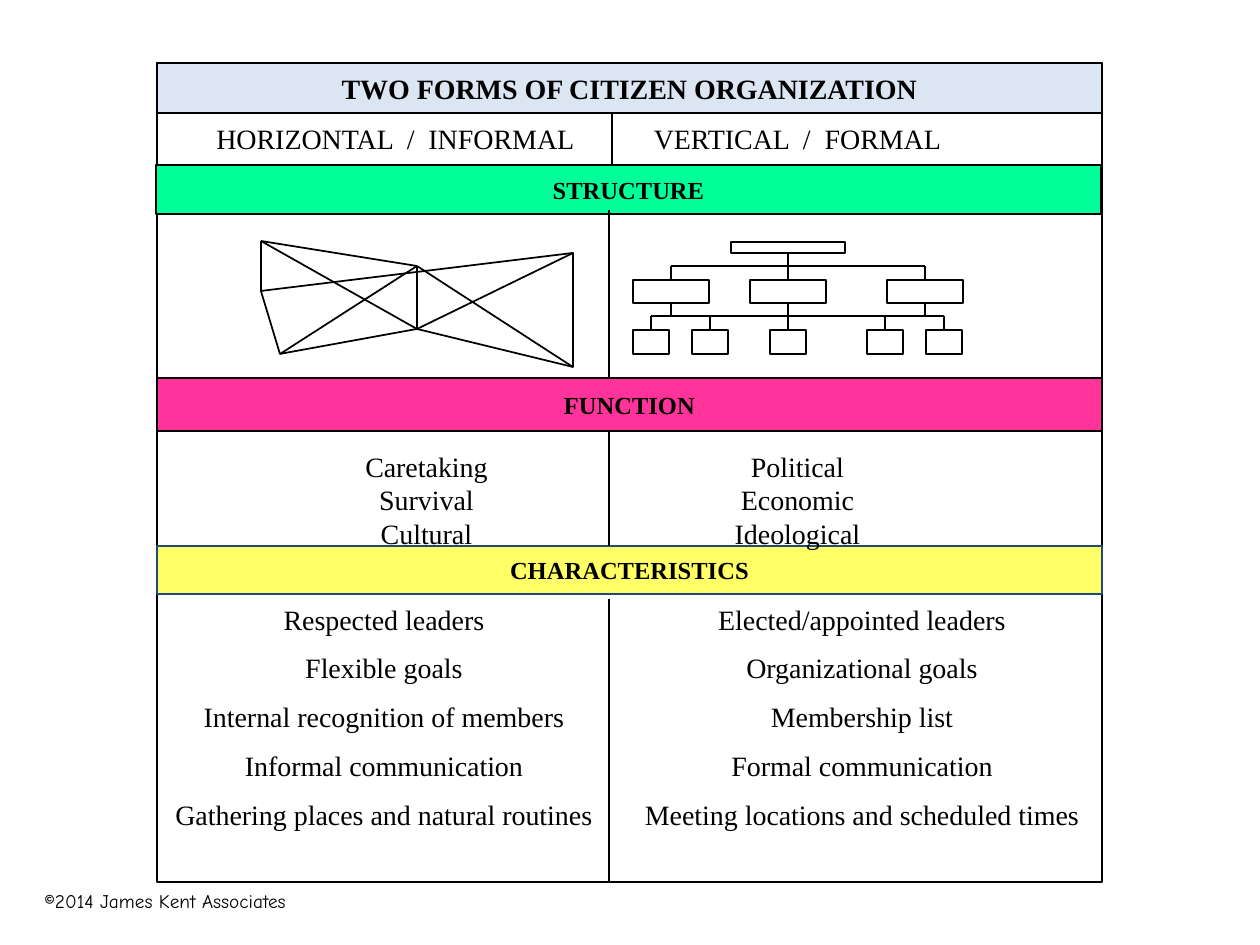
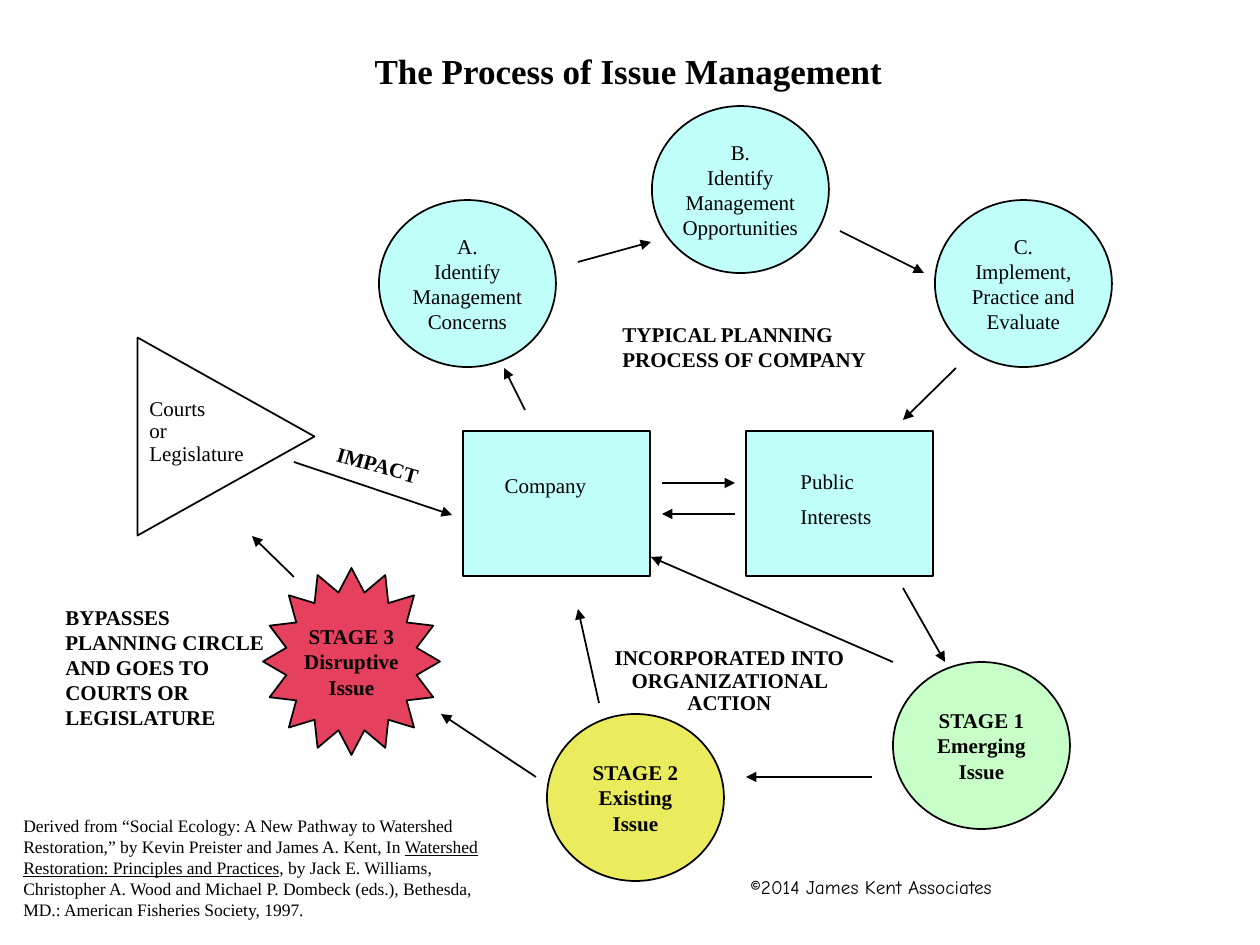
from lxml.etree import SubElement
from pptx import Presentation
from pptx.dml.color import RGBColor
from pptx.enum.shapes import MSO_CONNECTOR, MSO_SHAPE
from pptx.enum.text import MSO_ANCHOR, MSO_AUTO_SIZE, PP_ALIGN
from pptx.oxml.ns import qn
from pptx.util import Emu, Pt

UNIT = 914400 / 126  # EMU in one px
TITLE_ONLY = 5
SERIF, HAND = "Times New Roman", "Comic Neue"
BLACK, NAVY = "000000", "1F497D"
ICE, GREEN, PINK, YELLOW = "DCE6F2", "00FF99", "FF3399", "FFFF66"
AQUA, LIME, MUSTARD, RED = "C0FEF9", "C8FEC8", "EAEC5E", "E5405D"
DIVIDER = 609


def px(*lengths):
    return [Emu(round(length * UNIT)) for length in lengths]


def colour(hex_text):
    return RGBColor.from_string(hex_text)


def write(box, paragraphs, size=12, bold=False, font=SERIF, align=PP_ALIGN.LEFT,
          gap=0, spacing=None, anchor=MSO_ANCHOR.TOP, wrap=True):
    """Fill a box; a paragraph is a string or a list of (text, underlined)."""
    frame = box.text_frame
    frame.word_wrap = wrap
    frame.auto_size = MSO_AUTO_SIZE.NONE
    frame.vertical_anchor = anchor
    for index, spans in enumerate(paragraphs):
        para = frame.add_paragraph() if index else frame.paragraphs[0]
        para.alignment = align
        if index and gap:
            para.space_before = Pt(gap)
        if spacing:
            para.line_spacing = spacing
        if isinstance(spans, str):
            spans = [(spans, False)]
        for text, underlined in spans:
            span = para.add_run()
            span.text = text
            span.font.name, span.font.size = font, Pt(size)
            span.font.bold, span.font.underline = bold, underlined
            span.font.color.rgb = colour(BLACK)


def add_text(page, left, top, width, height, paragraphs, **text_format):
    box = page.shapes.add_textbox(*px(left, top, width, height))
    write(box, paragraphs, **text_format)
    return box


def paint(shape, fill=None, line=BLACK):
    if fill:
        shape.fill.solid()
        shape.fill.fore_color.rgb = colour(fill)
    else:
        shape.fill.background()
    shape.line.color.rgb = colour(line)
    shape.line.width = Pt(1)


def add_box(page, left, top, width, height, kind=MSO_SHAPE.RECTANGLE,
            fill=None, line=BLACK):
    box = page.shapes.add_shape(kind, *px(left, top, width, height))
    box.shadow.inherit = False
    paint(box, fill, line)
    return box


def add_label_box(page, left, top, width, height, paragraphs, size=12, bold=False,
                  **look):
    box = add_box(page, left, top, width, height, **look)
    write(box, paragraphs, size=size, bold=bold, align=PP_ALIGN.CENTER,
          anchor=MSO_ANCHOR.MIDDLE, wrap=False)


def add_line(page, start, end, arrow=False):
    line = page.shapes.add_connector(MSO_CONNECTOR.STRAIGHT, *px(*start, *end))
    line.line.color.rgb = colour(BLACK)
    line.line.width = Pt(1)
    properties = line._element.spPr
    if arrow:
        SubElement(properties.find(qn("a:ln")), qn("a:tailEnd"), type="triangle")
    SubElement(properties, qn("a:effectLst"))


def add_title(page, left, top, width, height, text, size):
    title = page.shapes.title
    title.left, title.top, title.width, title.height = px(left, top, width, height)
    write(title, [text], size=size, bold=True, align=PP_ALIGN.CENTER,
          anchor=MSO_ANCHOR.MIDDLE)
    return title


def add_copyright(page, left, top):
    add_text(page, left, top, 307, 37, ["©2014 James Kent Associates"],
             size=11, font=HAND)


def draw_network(page):
    top_left, mid_left, low_left = (261, 241), (261, 291), (280, 354)
    high_hub, low_hub = (417, 266), (417, 329)
    top_right, low_right = (573, 253), (573, 367)
    builder = page.shapes.build_freeform(*low_left, scale=UNIT)
    builder.add_line_segments([low_hub, low_right, top_right, mid_left], close=True)
    outline = builder.convert_to_shape()
    outline.shadow.inherit = False
    paint(outline)
    for start, end in [(low_right, high_hub), (high_hub, top_left),
                       (top_left, mid_left), (low_hub, high_hub),
                       (low_hub, top_right), (high_hub, low_left),
                       (low_hub, top_left)]:
        add_line(page, start, end)


def draw_hierarchy(page):
    managers, staff = [671, 788, 925], [651, 710, 788, 885, 944]
    manager_rail, staff_rail = 266, 316
    for centres, top, width, height in [([788], 242, 114, 11),
                                        (managers, 280, 76, 23),
                                        (staff, 330, 36, 24)]:
        for centre in centres:
            add_box(page, centre - width // 2, top, width, height)
    for centres, rail in [(managers, manager_rail), (staff, staff_rail)]:
        add_line(page, (centres[0], rail), (centres[-1], rail))
    for centres, top, bottom in [([788], 253, manager_rail),
                                 (managers, manager_rail, 279),
                                 (managers, 303, staff_rail),
                                 (staff, staff_rail, 329)]:
        for centre in centres:
            add_line(page, (centre, top), (centre, bottom))


def build_organization(deck):
    page = deck.slides.add_slide(deck.slide_layouts[TITLE_ONLY])

    # Frame and bands
    add_box(page, 157, 63, 945, 819)
    title = add_title(page, 157, 63, 945, 50, "TWO FORMS OF CITIZEN ORGANIZATION", 16)
    paint(title, ICE)
    for left, top, height, name, fill, line in [
            (156, 165, 49, "STRUCTURE", GREEN, BLACK),
            (157, 378, 53, "FUNCTION", PINK, BLACK),
            (157, 546, 48, "CHARACTERISTICS", YELLOW, NAVY)]:
        add_label_box(page, left, top, 945, height, [name], size=14, bold=True,
                      fill=fill, line=line)

    # Column dividers
    for x, top, bottom in [(612, 114, 165), (DIVIDER, 210, 378),
                           (DIVIDER, 431, 546), (DIVIDER, 599, 882)]:
        add_line(page, (x, top), (x, bottom))

    draw_network(page)
    draw_hierarchy(page)

    # Both columns: heading, functions, characteristics
    for left, top, width, height, gap, lines in [
            (199, 115, 393, 47, 0, ["HORIZONTAL  /  INFORMAL"]),
            (632, 115, 331, 47, 0, ["VERTICAL  /  FORMAL"]),
            (261, 443, 331, 109, 0, ["Caretaking", "Survival", "Cultural"]),
            (632, 443, 331, 109, 0, ["Political", "Economic", "Ideological"]),
            (157, 596, 454, 250, 8.7,
             ["Respected leaders", "Flexible goals", "Internal recognition of members",
              "Informal communication", "Gathering places and natural routines"]),
            (632, 596, 460, 250, 8.7,
             ["Elected/appointed leaders", "Organizational goals", "Membership list",
              "Formal communication", "Meeting locations and scheduled times"])]:
        add_text(page, left, top, width, height, lines, size=16,
                 align=PP_ALIGN.CENTER, gap=gap)
    add_copyright(page, 32, 883)


def build_process(deck):
    page = deck.slides.add_slide(deck.slide_layouts[TITLE_ONLY])
    add_title(page, 140, 43, 977, 54, "The Process of Issue Management", 20)

    # Planning steps and issue stages
    for left, top, fill, bold, lines in [
            (379, 200, AQUA, False, ["A.", "Identify", "Management", "Concerns"]),
            (652, 106, AQUA, False, ["B.", "Identify", "Management", "Opportunities"]),
            (935, 200, AQUA, False, ["C.", "Implement,", "Practice and", "Evaluate"]),
            (893, 662, LIME, True, ["STAGE 1", "Emerging", "Issue"]),
            (547, 714, MUSTARD, True, ["STAGE 2", "Existing", "Issue"])]:
        add_label_box(page, left, top, 177, 167, lines, bold=bold,
                      kind=MSO_SHAPE.OVAL, fill=fill)
    add_label_box(page, 263, 568, 177, 187, ["STAGE 3", "Disruptive", "Issue"],
                  bold=True, kind=MSO_SHAPE.STAR_16_POINT, fill=RED)

    # Courts, company and public
    courts = add_box(page, 127, 348, 198, 177, kind=MSO_SHAPE.ISOSCELES_TRIANGLE)
    courts.rotation = 90
    add_text(page, 137, 392, 126, 76, ["Courts", "or", "Legislature"], spacing=0.9)
    for left in (463, 746):
        add_box(page, left, 431, 187, 145, fill=AQUA)
    add_text(page, 472, 466, 147, 40, ["Company"], align=PP_ALIGN.CENTER)
    add_text(page, 788, 462, 157, 76, ["Public", "Interests"], gap=6)

    # Arrows
    for start, end in [((662, 483), (735, 483)), ((735, 514), (662, 514)),
                       ((525, 410), (504, 368)), ((578, 262), (651, 242)),
                       ((840, 231), (924, 273)), ((956, 368), (903, 420)),
                       ((903, 588), (945, 662)), ((872, 777), (746, 777)),
                       ((599, 703), (578, 609)), ((536, 777), (441, 714)),
                       ((294, 577), (252, 536)), ((294, 462), (452, 515)),
                       ((893, 662), (651, 557))]:
        add_line(page, start, end, arrow=True)

    # Captions
    add_text(page, 610, 315, 272, 63, ["TYPICAL PLANNING PROCESS OF COMPANY"], bold=True)
    impact = add_text(page, 323, 450, 139, 38, ["IMPACT"], bold=True)
    impact.rotation = 16
    add_text(page, 53, 598, 231, 143,
             ["BYPASSES PLANNING CIRCLE AND GOES TO COURTS OR LEGISLATURE"], bold=True)
    add_text(page, 598, 641, 263, 81, ["INCORPORATED INTO ORGANIZATIONAL ACTION"],
             bold=True, align=PP_ALIGN.CENTER, spacing=0.9)

    # Citation
    add_text(page, 11, 809, 514, 121, [[
        ("Derived from “Social Ecology: A New Pathway to Watershed Restoration,” "
         "by Kevin Preister and James A. Kent, In ", False),
        ("Watershed Restoration: Principles and Practices", True),
        (", by Jack E. Williams, Christopher A. Wood and Michael P. Dombeck (eds.), "
         "Bethesda, MD.: American Fisheries Society, 1997.", False)]], size=10)
    add_copyright(page, 738, 869)


def main():
    deck = Presentation()
    deck.slide_width, deck.slide_height = px(1260, 945)
    build_organization(deck)
    build_process(deck)
    deck.save("out.pptx")


if __name__ == "__main__":
    main()
